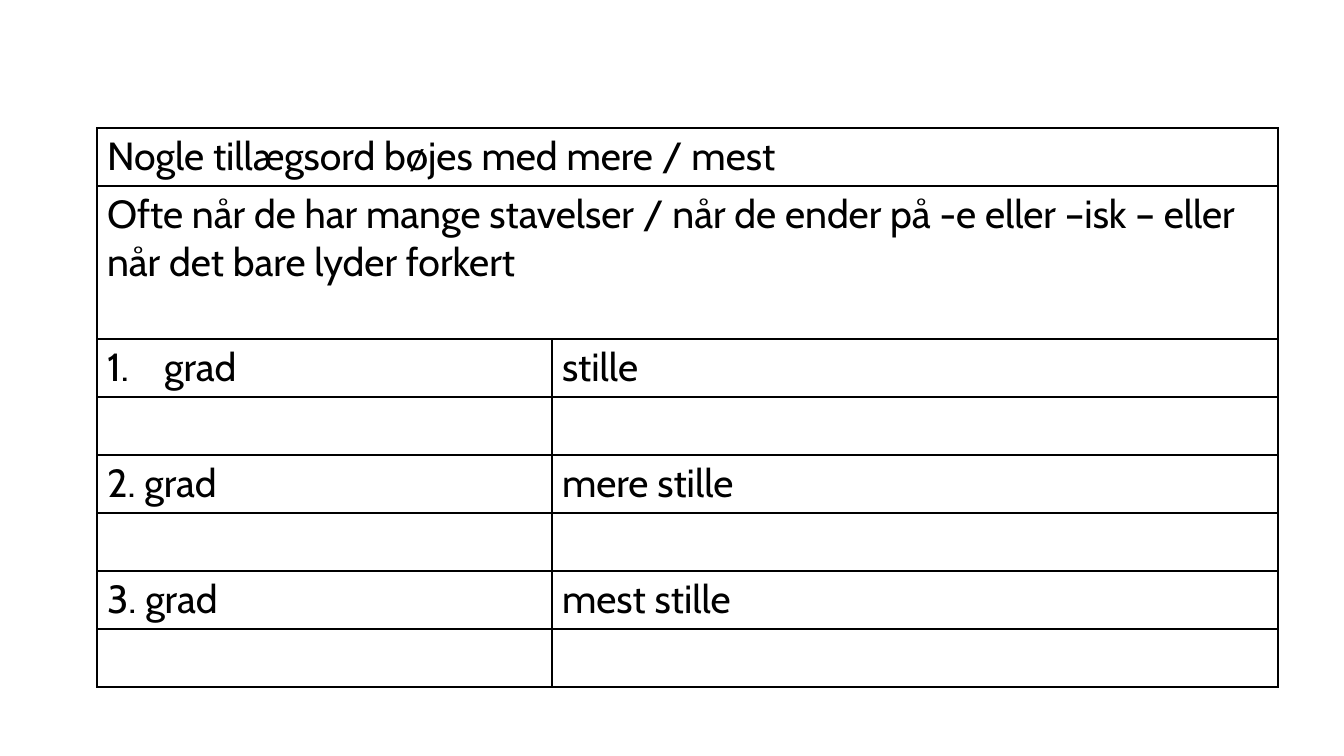
from lxml import etree
from pptx import Presentation
from pptx.dml.color import RGBColor
from pptx.oxml.ns import qn
from pptx.util import Emu, Pt

EMU_PER_PX = 914400 / 100.8
BLACK = "000000"
WHITE = "FFFFFF"
FONT = "Cabin"
TEXT_SIZE = 28
BORDER_WIDTH = 1
NUMBER_INDENT = 57

TABLE_LEFT, TABLE_TOP = 97, 128
COLUMN_WIDTHS = [455, 726]
ROW_HEIGHT, RULE_ROW_HEIGHT = 58, 153
RULE_ROW = 1

# A row with one text spans both columns
ROWS = [
    ["Nogle tillægsord bøjes med mere / mest"],
    ["Ofte når de har mange stavelser / når de ender på -e eller –isk – eller "
     "når det bare lyder forkert"],
    ["grad", "stille"],
    ["", ""],
    ["2. grad", "mere stille"],
    ["", ""],
    ["3. grad", "mest stille"],
    ["", ""],
]
NUMBERED_CELL = (2, 0)


def px(length):
    return Emu(round(length * EMU_PER_PX))


def color(hex_string):
    return RGBColor.from_string(hex_string)


def add_borders(cell):
    properties = cell._tc.get_or_add_tcPr()
    for position, side in enumerate(("lnL", "lnR", "lnT", "lnB")):
        line = etree.Element(qn(f"a:{side}"), w=str(Pt(BORDER_WIDTH)))
        fill = etree.SubElement(line, qn("a:solidFill"))
        etree.SubElement(fill, qn("a:srgbClr"), val=BLACK)
        properties.insert(position, line)


def add_number(para):
    properties = para._p.get_or_add_pPr()
    properties.set("marL", str(px(NUMBER_INDENT)))
    properties.set("indent", str(-px(NUMBER_INDENT)))
    etree.SubElement(properties, qn("a:buFont"), typeface="+mj-lt")
    etree.SubElement(properties, qn("a:buAutoNum"), type="arabicPeriod")


def style_cell(cell):
    cell.fill.solid()
    cell.fill.fore_color.rgb = color(WHITE)
    add_borders(cell)


def write_cell(cell, text, numbered):
    cell.text_frame.text = text
    para = cell.text_frame.paragraphs[0]
    if numbered:
        add_number(para)
    para.font.size = Pt(TEXT_SIZE)
    for span in para.runs:
        span.font.size = Pt(TEXT_SIZE)
        span.font.name = FONT
        span.font.color.rgb = color(BLACK)


def add_grammar_table(page):
    heights = [ROW_HEIGHT] * len(ROWS)
    heights[RULE_ROW] = RULE_ROW_HEIGHT
    frame = page.shapes.add_table(
        len(ROWS), len(COLUMN_WIDTHS), px(TABLE_LEFT), px(TABLE_TOP),
        px(sum(COLUMN_WIDTHS)), px(sum(heights)))
    table = frame.table
    table.first_row = False
    table.horz_banding = False

    # Grid
    for column, width in zip(table.columns, COLUMN_WIDTHS):
        column.width = px(width)
    for row, height in zip(table.rows, heights):
        row.height = px(height)
    for cell in table.iter_cells():
        style_cell(cell)

    # Wording
    for row_index, texts in enumerate(ROWS):
        if len(texts) == 1:
            table.cell(row_index, 0).merge(table.cell(row_index, 1))
        for column_index, text in enumerate(texts):
            position = (row_index, column_index)
            write_cell(table.cell(*position), text, position == NUMBERED_CELL)


def main():
    deck = Presentation()
    deck.slide_width, deck.slide_height = px(1344), px(756)
    page = deck.slides.add_slide(deck.slide_layouts[6])
    add_grammar_table(page)
    deck.save("out.pptx")


if __name__ == "__main__":
    main()
